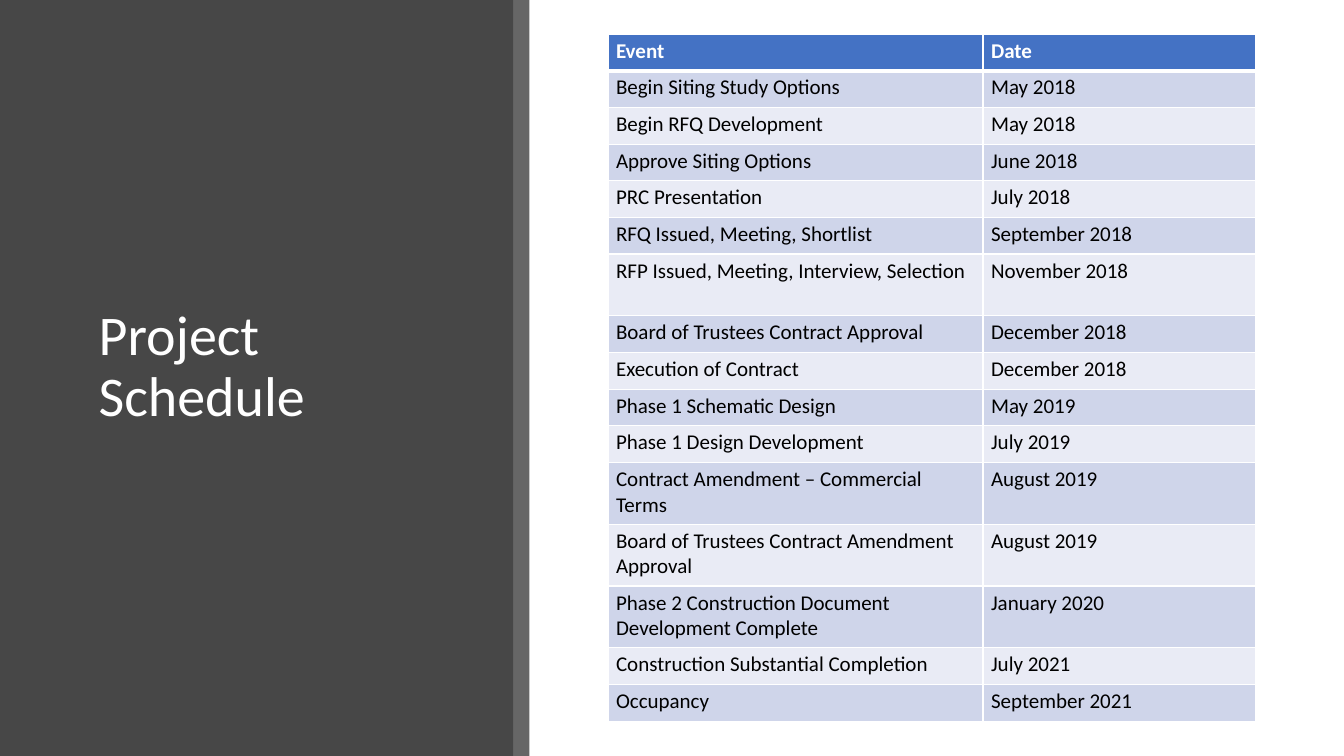
"""Build the project schedule slide."""
from lxml import etree
from pptx import Presentation
from pptx.dml.color import RGBColor
from pptx.enum.shapes import MSO_SHAPE
from pptx.enum.text import MSO_ANCHOR
from pptx.oxml.ns import qn
from pptx.util import Inches, Pt

TITLE = "Project Schedule"
HEADER = ("Event", "Date")
EVENTS = [
    ("Begin Siting Study Options", "May 2018"),
    ("Begin RFQ Development", "May 2018"),
    ("Approve Siting Options", "June 2018"),
    ("PRC Presentation", "July 2018"),
    ("RFQ Issued, Meeting, Shortlist", "September 2018"),
    ("RFP Issued, Meeting, Interview, Selection", "November 2018"),
    ("Board of Trustees Contract Approval", "December 2018"),
    ("Execution of Contract", "December 2018"),
    ("Phase 1 Schematic Design", "May 2019"),
    ("Phase 1 Design Development", "July 2019"),
    ("Contract Amendment – Commercial Terms", "August 2019"),
    ("Board of Trustees Contract Amendment Approval", "August 2019"),
    ("Phase 2 Construction Document Development Complete", "January 2020"),
    ("Construction Substantial Completion", "July 2021"),
    ("Occupancy", "September 2021"),
]
TWO_LINE_ROWS = {6, 11, 12, 13}

FONT = "Calibri"
WHITE = RGBColor(0xFF, 0xFF, 0xFF)
BLACK = RGBColor(0, 0, 0)
CHARCOAL = RGBColor(0x40, 0x40, 0x40)
BLUE = RGBColor(0x44, 0x72, 0xC4)
BANDS = (RGBColor(0xE9, 0xEB, 0xF5), RGBColor(0xCF, 0xD5, 0xEA))
RECTANGLE = MSO_SHAPE.RECTANGLE
BOTTOM = MSO_ANCHOR.BOTTOM

SLIDE_W, SLIDE_H = 13.33, 7.5
PANELS = [(5.25, BLACK, 60), (5.09, CHARCOAL, 80)]
TITLE_BOX = (0.88, 1.23, 3.66, 3.07)
TABLE_BOX = (6.03, 0.34, 6.42, 6.82)
COLUMNS = (3.72, 2.7)
LINE_H = 0.25


def add_panel(slide, width, color, opacity):
    sp = slide.shapes.add_shape(RECTANGLE, 0, 0, Inches(width), Inches(SLIDE_H))
    sp.shadow.inherit = False
    sp.line.fill.background()
    sp.fill.solid()
    sp.fill.fore_color.rgb = color
    clr = sp.fill._xPr.find(".//" + qn("a:srgbClr"))
    etree.SubElement(clr, qn("a:alpha")).set("val", str(opacity * 1000))


def style_text(p, size, color, bold=False):
    p.font.name = FONT
    p.font.size = Pt(size)
    p.font.color.rgb = color
    p.font.bold = bold


def add_title(slide):
    tf = slide.shapes.add_textbox(*map(Inches, TITLE_BOX)).text_frame
    tf.word_wrap = True
    tf.vertical_anchor = BOTTOM
    p = tf.paragraphs[0]
    p.text = TITLE
    p.line_spacing = 0.9
    style_text(p, 40, WHITE)


def set_borders(cell, bottom, top):
    tc_pr = cell._tc.get_or_add_tcPr()
    widths = {"a:lnL": 1, "a:lnR": 1, "a:lnT": top, "a:lnB": bottom}
    for i, (side, width) in enumerate(widths.items()):
        ln = etree.Element(qn(side), w=str(Pt(width)))
        fill = etree.SubElement(ln, qn("a:solidFill"))
        etree.SubElement(fill, qn("a:srgbClr")).set("val", str(WHITE))
        tc_pr.insert(i, ln)


def add_schedule(slide):
    rows = [HEADER, *EVENTS]
    table = slide.shapes.add_table(len(rows), len(HEADER), *map(Inches, TABLE_BOX)).table
    for column, width in zip(table.columns, COLUMNS):
        column.width = Inches(width)
    line_count = len(rows) + len(TWO_LINE_ROWS)
    padding = (TABLE_BOX[3] - line_count * LINE_H) / len(rows)
    for r, values in enumerate(rows):
        header = r == 0
        lines = 2 if r in TWO_LINE_ROWS else 1
        table.rows[r].height = Inches(lines * LINE_H + padding)
        for c, value in enumerate(values):
            cell = table.cell(r, c)
            cell.margin_left = cell.margin_right = Inches(0.08)
            cell.margin_top = cell.margin_bottom = Inches(0.04)
            cell.fill.solid()
            cell.fill.fore_color.rgb = BLUE if header else BANDS[r % 2]
            set_borders(cell, 3 if header else 1, 3 if r == 1 else 1)
            p = cell.text_frame.paragraphs[0]
            p.text = value
            style_text(p, 15, WHITE if header else BLACK, header)


def main():
    prs = Presentation()
    prs.slide_width, prs.slide_height = Inches(SLIDE_W), Inches(SLIDE_H)
    slide = prs.slides.add_slide(prs.slide_layouts[6])
    for panel in PANELS:
        add_panel(slide, *panel)
    add_title(slide)
    add_schedule(slide)
    prs.save("out.pptx")


if __name__ == "__main__":
    main()
